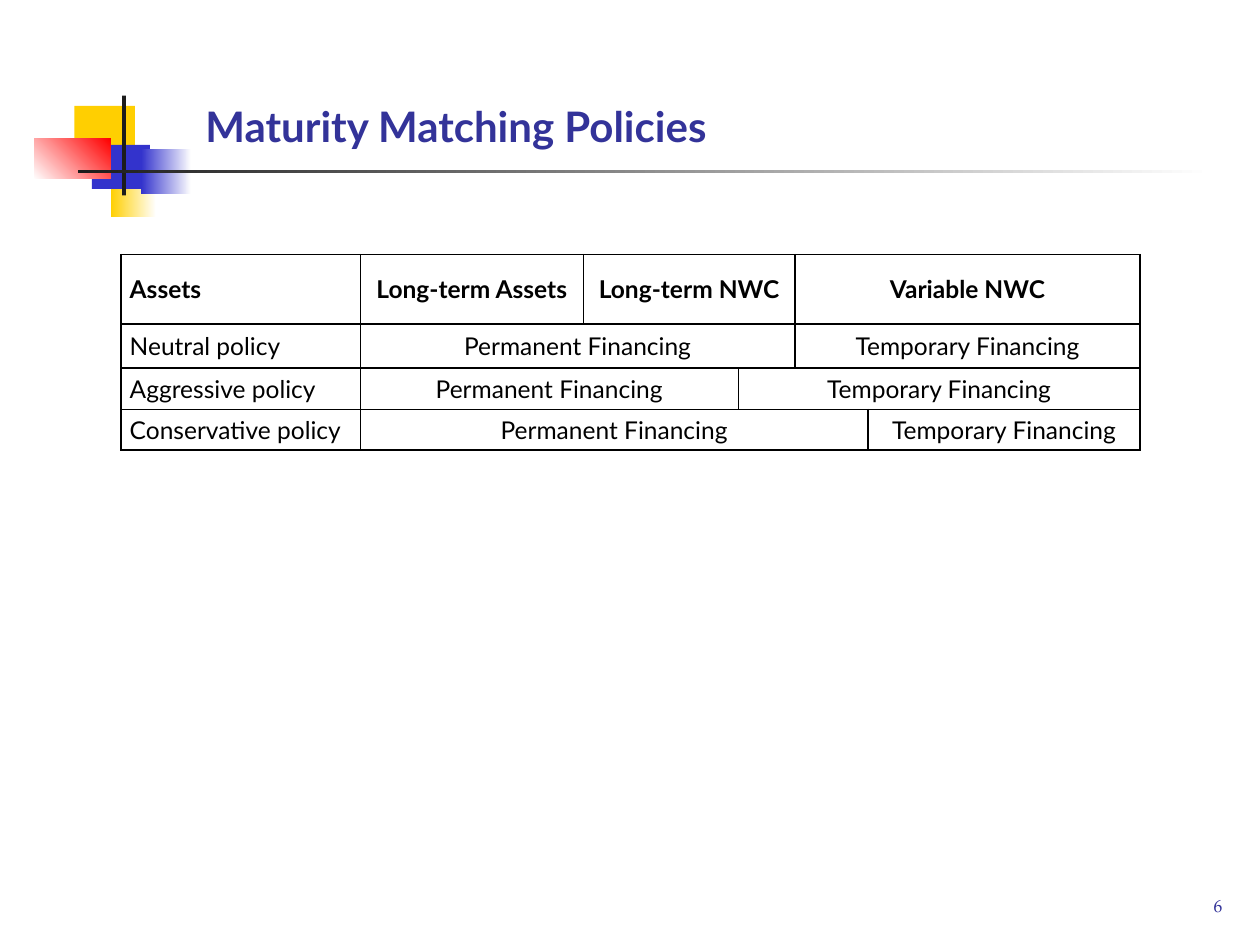
from dataclasses import dataclass

from lxml import etree
from pptx import Presentation
from pptx.dml.color import RGBColor
from pptx.enum.shapes import MSO_SHAPE
from pptx.enum.text import MSO_ANCHOR, MSO_AUTO_SIZE, PP_ALIGN
from pptx.oxml.ns import qn
from pptx.util import Inches, Pt

RECTANGLE = MSO_SHAPE.RECTANGLE
LEFT, CENTER, RIGHT = PP_ALIGN.LEFT, PP_ALIGN.CENTER, PP_ALIGN.RIGHT
MIDDLE, BOTTOM = MSO_ANCHOR.MIDDLE, MSO_ANCHOR.BOTTOM
NO_AUTOFIT = MSO_AUTO_SIZE.NONE
TITLE_ONLY = 5


@dataclass(frozen=True)
class Theme:
    """Colours, fonts and type sizes of the deck."""
    yellow: str = "FFCF01"
    blue: str = "3333CC"
    red: str = "FF0000"
    white: str = "FFFFFF"
    dark: str = "1C1C1C"
    heading: str = "333399"
    ink: str = "000000"
    font: str = "Lato"
    number_font: str = "TeX Gyre Pagella"
    title_size: int = 24
    table_size: int = 14
    number_size: int = 10
    border: int = 1


THEME = Theme()

COLUMNS = (1.9, 1.77, 1.23, 0.45, 0.58, 2.16)
ROWS = (0.55, 0.35, 0.33, 0.32)
FINANCING = ("Permanent Financing", "Temporary Financing")
POLICIES = (
    (("Assets", 1), ("Long-term Assets", 1), ("Long-term NWC", 2), ("Variable NWC", 2)),
    (("Neutral policy", 1), (FINANCING[0], 3), (FINANCING[1], 2)),
    (("Aggressive policy", 1), (FINANCING[0], 2), (FINANCING[1], 3)),
    (("Conservative policy", 1), (FINANCING[0], 4), (FINANCING[1], 1)),
)


def write(frame, text, size, color, font=THEME.font, bold=False, align=LEFT):
    """Write one formatted run into the first paragraph of a frame."""
    para = frame.paragraphs[0]
    para.alignment = align
    span = para.add_run()
    span.text = text
    span.font.name = font
    span.font.size = Pt(size)
    span.font.bold = bold
    span.font.color.rgb = RGBColor.from_string(color)


def add_block(page, box, colors, angle=0):
    """Add a borderless rectangle with a plain or two-colour fill."""
    block = page.shapes.add_shape(RECTANGLE, *map(Inches, box))
    block.shadow.inherit = False
    block.line.fill.background()
    if len(colors) == 1:
        block.fill.solid()
        block.fill.fore_color.rgb = RGBColor.from_string(colors[0])
        return
    block.fill.gradient()
    block.fill.gradient_angle = angle
    for stop, color in zip(block.fill.gradient_stops, colors):
        stop.color.rgb = RGBColor.from_string(color)


def add_emblem(page, box):
    """Draw the overlapping blocks and the fading rule from the box corner."""
    left, top, rule_width = box
    blocks = (
        ((0.61, 0.44, 0.36, 0.52), (THEME.yellow, THEME.white), 0),
        ((0.32, 0.08, 0.48, 0.35), (THEME.yellow,), 0),
        ((0.46, 0.39, 0.46, 0.35), (THEME.blue,), 0),
        ((0.85, 0.42, 0.4, 0.36), (THEME.blue, THEME.white), 0),
        ((0, 0.34, 0.61, 0.32), (THEME.white, THEME.red), 45),
        ((0.7, 0, 0.03, 0.79), (THEME.dark,), 0),
        ((0.35, 0.59, rule_width, 0.02), (THEME.dark, THEME.white), 0),
    )
    for (x, y, width, height), colors, angle in blocks:
        add_block(page, (left + x, top + y, width, height), colors, angle)


def add_title(page, box, text):
    """Place and fill the title placeholder."""
    title = page.shapes.title
    title.left, title.top, title.width, title.height = map(Inches, box)
    frame = title.text_frame
    frame.auto_size = NO_AUTOFIT
    frame.vertical_anchor = BOTTOM
    write(frame, text, THEME.title_size, THEME.heading, bold=True)


def add_page_number(page, box, number):
    """Write the page number at the lower right of the box."""
    frame = page.shapes.add_textbox(*map(Inches, box)).text_frame
    frame.word_wrap = True
    frame.vertical_anchor = BOTTOM
    write(frame, number, THEME.number_size, THEME.heading, THEME.number_font, align=RIGHT)


def style_cell(cell):
    """Give a cell thin borders, tight margins and no fill."""
    properties = cell._tc.get_or_add_tcPr()
    for side in ("a:lnL", "a:lnR", "a:lnT", "a:lnB"):
        line = etree.SubElement(properties, qn(side), w=str(Pt(THEME.border)))
        fill = etree.SubElement(line, qn("a:solidFill"))
        etree.SubElement(fill, qn("a:srgbClr"), val=THEME.ink)
    cell.fill.background()
    cell.vertical_anchor = MIDDLE
    cell.margin_left = cell.margin_right = Inches(0.07)
    cell.margin_top = cell.margin_bottom = 0


def add_policy_table(page, box):
    """Build the table whose merged cells show each financing mix."""
    table = page.shapes.add_table(len(ROWS), len(COLUMNS), *map(Inches, box)).table
    table.first_row = table.horz_banding = False
    for column, width in zip(table.columns, COLUMNS):
        column.width = Inches(width)
    for row, height in zip(table.rows, ROWS):
        row.height = Inches(height)
    for cell in table.iter_cells():
        style_cell(cell)
    for row_index, entries in enumerate(POLICIES):
        start = 0
        for text, width in entries:
            cell = table.cell(row_index, start)
            if width > 1:
                cell.merge(table.cell(row_index, start + width - 1))
            write(cell.text_frame, text, THEME.table_size, THEME.ink,
                  bold=row_index == 0, align=CENTER if start else LEFT)
            start += width


def main():
    """Build and save the deck."""
    deck = Presentation()
    deck.slide_width, deck.slide_height = Inches(10), Inches(7.5)
    page = deck.slides.add_slide(deck.slide_layouts[TITLE_ONLY])
    add_emblem(page, (0.27, 0.76, 9))
    add_title(page, (1.53, 0.41, 8.52, 0.84), "Maturity Matching Policies")
    add_page_number(page, (7.52, 6.82, 2.28, 0.5), "6")
    add_policy_table(page, (0.96, 2.02, sum(COLUMNS), sum(ROWS)))
    deck.save("out.pptx")


if __name__ == "__main__":
    main()
